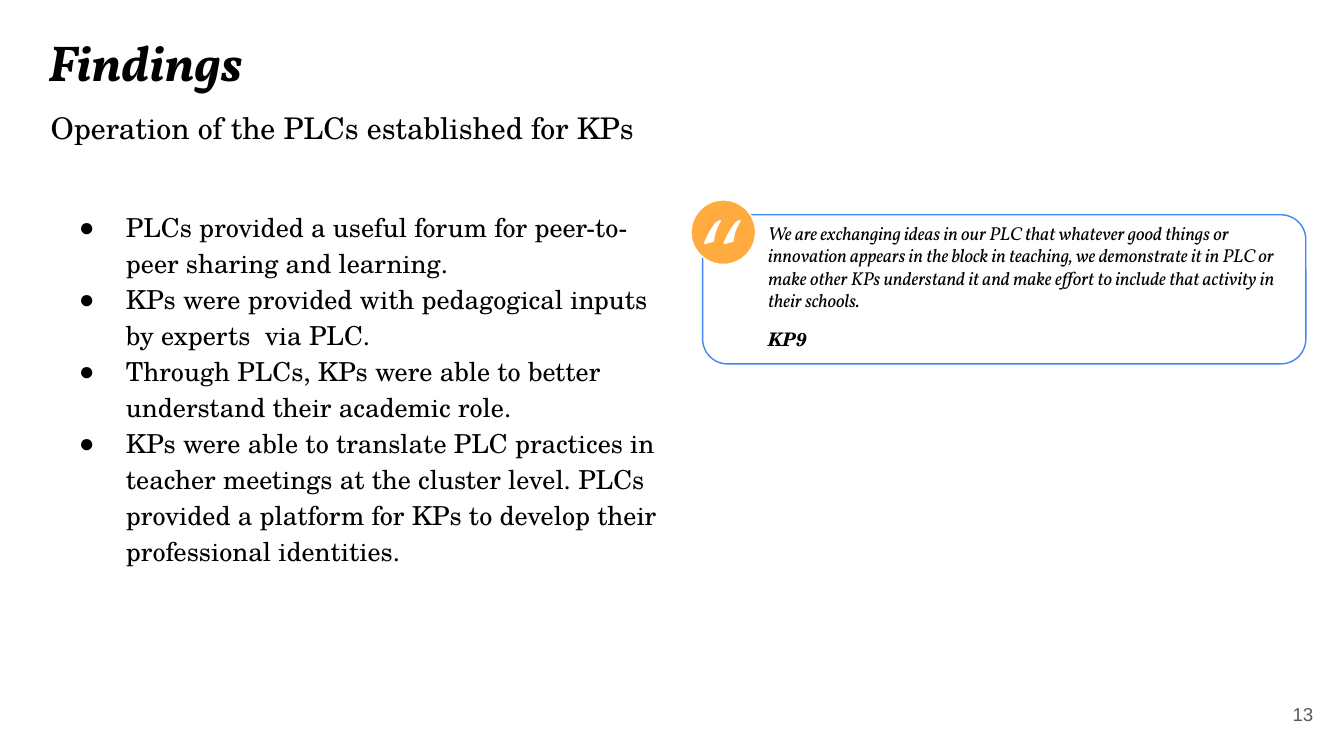
from pptx import Presentation
from pptx.dml.color import RGBColor
from pptx.enum.shapes import MSO_SHAPE as Kind
from pptx.enum.text import MSO_ANCHOR as Anchor, MSO_AUTO_SIZE as Fit, PP_ALIGN as Align
from pptx.oxml.ns import qn
from pptx.util import Cm, Pt
from lxml.etree import SubElement as Sub

SERIF, BOOK, QUOTE, SANS = "TeX Gyre Schola", "Vollkorn", "TeX Gyre Pagella", "Arial"
BLACK, WHITE, GREY, BLUE, AMBER = "000000", "FFFFFF", "595959", "4285F4", "FFAB40"
INSET = Cm(0.25)

POINTS = [
    "PLCs provided a useful forum for peer-to-peer sharing and learning.",
    "KPs were provided with pedagogical inputs by experts  via PLC.",
    "Through PLCs, KPs were able to better understand their academic role.",
    "KPs were able to translate PLC practices in teacher meetings at the cluster level. "
    "PLCs provided a platform for KPs to develop their professional identities.",
]
SAYING = (
    "We are exchanging ideas in our PLC that whatever good things or innovation appears "
    "in the block in teaching, we demonstrate it in PLC or make other KPs understand it "
    "and make effort to include that activity in their schools."
)


def color(code):
    return RGBColor.from_string(code)


class Page:
    def __init__(self, deck):
        self.slide = deck.slides.add_slide(deck.slide_layouts[1])
        self.shapes = self.slide.shapes

    def frame(self, shape, anchor=Anchor.TOP):
        text = shape.text_frame
        text.word_wrap = True
        text.auto_size = Fit.NONE
        text.vertical_anchor = anchor
        text.margin_left = text.margin_right = INSET
        text.margin_top = text.margin_bottom = INSET
        return text

    def run(self, para, words, size, font=SERIF, ink=BLACK, bold=False, slant=False,
            align=Align.LEFT):
        para.alignment = align
        run = para.add_run()
        run.text = words
        face = run.font
        face.name, face.size = font, Pt(size)
        face.bold, face.italic = bold, slant
        face.color.rgb = color(ink)

    def place(self, holder, box):
        holder.left, holder.top, holder.width, holder.height = map(Cm, box)

    def title(self, box, words, size, **style):
        holder = self.shapes.title
        self.place(holder, box)
        self.run(self.frame(holder).paragraphs[0], words, size, **style)

    def list(self, box, items, size):
        holder = self.slide.placeholders[1]
        self.place(holder, box)
        text = self.frame(holder)
        for i, item in enumerate(items):
            para = text.add_paragraph() if i else text.paragraphs[0]
            self.run(para, item, size)
            para.line_spacing = 1.15
            para.space_before = Pt(0)
            self.bullet(para)

    def bullet(self, para):
        props = para._p.get_or_add_pPr()
        props.set("marL", str(Cm(1.27)))
        props.set("indent", str(Cm(-0.89)))
        Sub(props, qn("a:buChar")).set("char", "●")

    def text(self, box, words, size, anchor=Anchor.TOP, **style):
        shape = self.shapes.add_textbox(*map(Cm, box))
        self.run(self.frame(shape, anchor).paragraphs[0], words, size, **style)

    def shape(self, kind, box, fill, line):
        shape = self.shapes.add_shape(kind, *map(Cm, box))
        shape.shadow.inherit = False
        shape.fill.solid()
        shape.fill.fore_color.rgb = color(fill)
        shape.line.color.rgb = color(line)
        shape.line.width = Pt(0.75)


def main():
    deck = Presentation()
    deck.slide_width, deck.slide_height = Cm(25.4), Cm(14.29)
    page = Page(deck)

    # Headings
    page.title((0.66, 0.33, 11.53, 1.6), "Findings", 27, font=BOOK, bold=True, slant=True)
    page.text((0.71, 1.83, 23.67, 1.09), "Operation of the PLCs established for KPs", 16)

    # Findings list
    page.list((0.86, 3.66, 11.84, 8.33), POINTS, 14)

    # Quote card with its badge
    page.shape(Kind.ROUNDED_RECTANGLE, (13.28, 4.06, 11.4, 2.82), WHITE, BLUE)
    page.shape(Kind.OVAL, (13.06, 3.78, 1.22, 1.22), AMBER, WHITE)
    page.text((14.27, 3.94, 10.21, 2.16), SAYING, 10, font=BOOK, slant=True)
    page.text((12.98, 3.4, 1.35, 1.6), "“", 50, font=QUOTE, ink=WHITE)
    page.text((14.27, 5.94, 7.98, 0.94), "KP9", 10, bold=True, slant=True)

    # Page number
    page.text((23.55, 12.95, 1.52, 1.09), "13", 10, Anchor.MIDDLE,
              font=SANS, ink=GREY, align=Align.RIGHT)

    deck.save("out.pptx")


if __name__ == "__main__":
    main()
